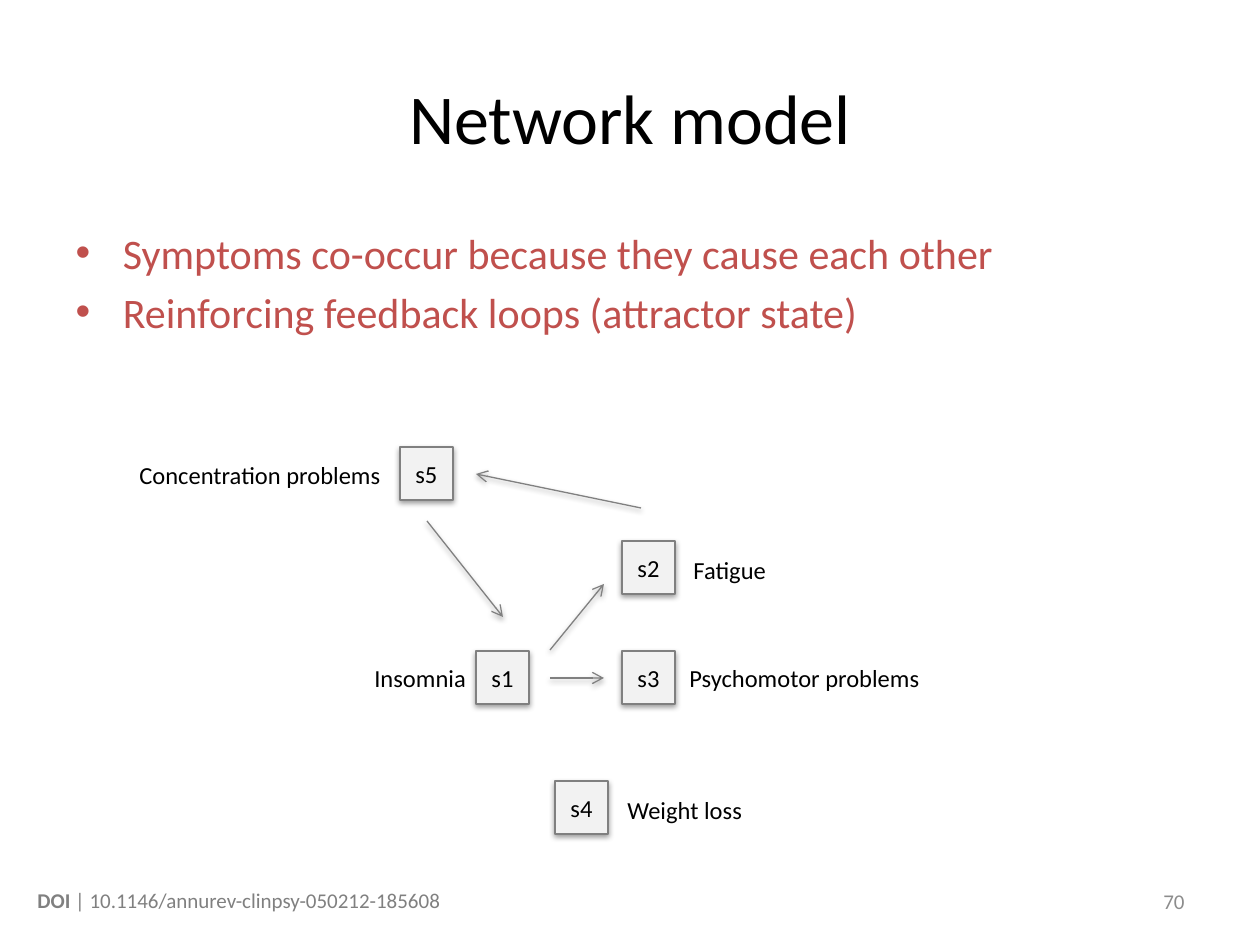
from dataclasses import dataclass

from lxml import etree
from pptx import Presentation
from pptx import util as u
from pptx.dml.color import RGBColor
from pptx.enum import shapes, text
from pptx.oxml import ns


@dataclass(frozen=True)
class Theme:
    font: str = "Calibri"
    ink: str = "000000"
    paper: str = "FFFFFF"
    accent: str = "C0504D"
    node: str = "F2F2F2"
    edge: str = "808080"
    page: str = "8C8C8C"
    title: int = 40
    body: int = 24
    label: int = 14
    foot: int = 12


@dataclass(frozen=True)
class Label:
    words: str
    x: int
    y: int
    w: int


@dataclass(frozen=True)
class Node:
    name: str
    x: int
    y: int


@dataclass(frozen=True)
class Arrow:
    x1: int
    y1: int
    x2: int
    y2: int


THEME = Theme()
SCALE = 914400 / 126
SIDE = 53
LEFT, CENTER, RIGHT = text.PP_ALIGN.LEFT, text.PP_ALIGN.CENTER, text.PP_ALIGN.RIGHT
MIDDLE = text.MSO_ANCHOR.MIDDLE

LABELS = [
    Label("Psychomotor problems", 677, 651, 264),
    Label("Insomnia", 362, 651, 141),
    Label("Concentration problems", 127, 448, 292),
    Label("Fatigue", 681, 543, 108),
    Label("Weight loss", 615, 783, 151),
]
NODES = [
    Node("s1", 476, 651),
    Node("s2", 622, 541),
    Node("s3", 622, 651),
    Node("s4", 555, 781),
    Node("s5", 400, 447),
]
ARROWS = [
    Arrow(550, 650, 604, 584),
    Arrow(550, 678, 604, 678),
    Arrow(641, 508, 476, 474),
    Arrow(427, 521, 503, 617),
]


def px(*vals: int) -> list[u.Emu]:
    return [u.Emu(round(v * SCALE)) for v in vals]


def rgb(code: str) -> RGBColor:
    return RGBColor.from_string(code)


def write(frame, words: str, *, size: int, color: str, align=None,
          anchor=None, lead: str = "", wrap: bool = True) -> None:
    frame.word_wrap = wrap
    if anchor is not None:
        frame.vertical_anchor = anchor
    for i, line in enumerate(words.split("\n")):
        para = frame.paragraphs[0] if i == 0 else frame.add_paragraph()
        if align is not None:
            para.alignment = align
        for part, bold in ((lead, True), (line, False)):
            if part:
                run = para.add_run()
                run.text = part
                font = run.font
                font.name, font.size, font.bold = THEME.font, u.Pt(size), bold
                font.color.rgb = rgb(color)


def shade(shape) -> None:
    props = shape._element.spPr
    for old in props.findall(ns.qn("a:effectLst")):
        props.remove(old)
    group = etree.SubElement(props, ns.qn("a:effectLst"))
    drop = etree.SubElement(group, ns.qn("a:outerShdw"), blurRad="40000",
                            dist="20000", dir="5400000", rotWithShape="0")
    color = etree.SubElement(drop, ns.qn("a:srgbClr"), val=THEME.ink)
    etree.SubElement(color, ns.qn("a:alpha"), val="38000")


def box(slide, words: str, x: int, y: int, w: int, *, fill: str, edge: str,
        width: float, align):
    shape = slide.shapes.add_shape(shapes.MSO_SHAPE.RECTANGLE, *px(x, y, w, SIDE))
    shape.shadow.inherit = False
    shape.fill.solid()
    shape.fill.fore_color.rgb = rgb(fill)
    shape.line.color.rgb = rgb(edge)
    shape.line.width = u.Pt(width)
    write(shape.text_frame, words, size=THEME.label, color=THEME.ink,
          align=align, anchor=MIDDLE)
    return shape


def draw_label(slide, item: Label) -> None:
    box(slide, item.words, item.x, item.y, item.w, fill=THEME.paper,
        edge=THEME.paper, width=1.5, align=LEFT)


def draw_node(slide, item: Node) -> None:
    shade(box(slide, item.name, item.x, item.y, SIDE, fill=THEME.node,
              edge=THEME.edge, width=0.75, align=CENTER))


def draw_arrow(slide, item: Arrow) -> None:
    line = slide.shapes.add_connector(
        shapes.MSO_CONNECTOR.STRAIGHT, *px(item.x1, item.y1, item.x2, item.y2))
    line.line.color.rgb = rgb(THEME.edge)
    line.line.width = u.Pt(0.75)
    etree.SubElement(line.line._get_or_add_ln(), ns.qn("a:tailEnd"), type="arrow")
    shade(line)


def place(shape, x: int, y: int, w: int, h: int) -> None:
    shape.left, shape.top, shape.width, shape.height = px(x, y, w, h)


def main() -> None:
    deck = Presentation()
    deck.slide_width, deck.slide_height = px(1260, 945)
    slide = deck.slides.add_slide(deck.slide_layouts[1])

    title, body = slide.placeholders
    place(title, 63, 38, 1134, 158)
    write(title.text_frame, "Network model", size=THEME.title, color=THEME.ink,
          align=CENTER, anchor=MIDDLE)
    place(body, 63, 221, 1134, 624)
    write(body.text_frame,
          "Symptoms co-occur because they cause each other\n"
          "Reinforcing feedback loops (attractor state)",
          size=THEME.body, color=THEME.accent)
    body.text_frame.paragraphs[0].space_before = u.Pt(0)

    for label in LABELS:
        draw_label(slide, label)
    for node in NODES:
        draw_node(slide, node)
    for arrow in ARROWS:
        draw_arrow(slide, arrow)

    page = slide.shapes.add_textbox(*px(903, 876, 294, 50))
    write(page.text_frame, "70", size=THEME.foot, color=THEME.page,
          align=RIGHT, anchor=MIDDLE)
    source = slide.shapes.add_textbox(*px(25, 881, 435, 38))
    write(source.text_frame, "| 10.1146/annurev-clinpsy-050212-185608",
          size=THEME.foot, color=THEME.edge, lead="DOI ", wrap=False)
    source.text_frame.auto_size = text.MSO_AUTO_SIZE.SHAPE_TO_FIT_TEXT

    deck.save("out.pptx")


if __name__ == "__main__":
    main()
